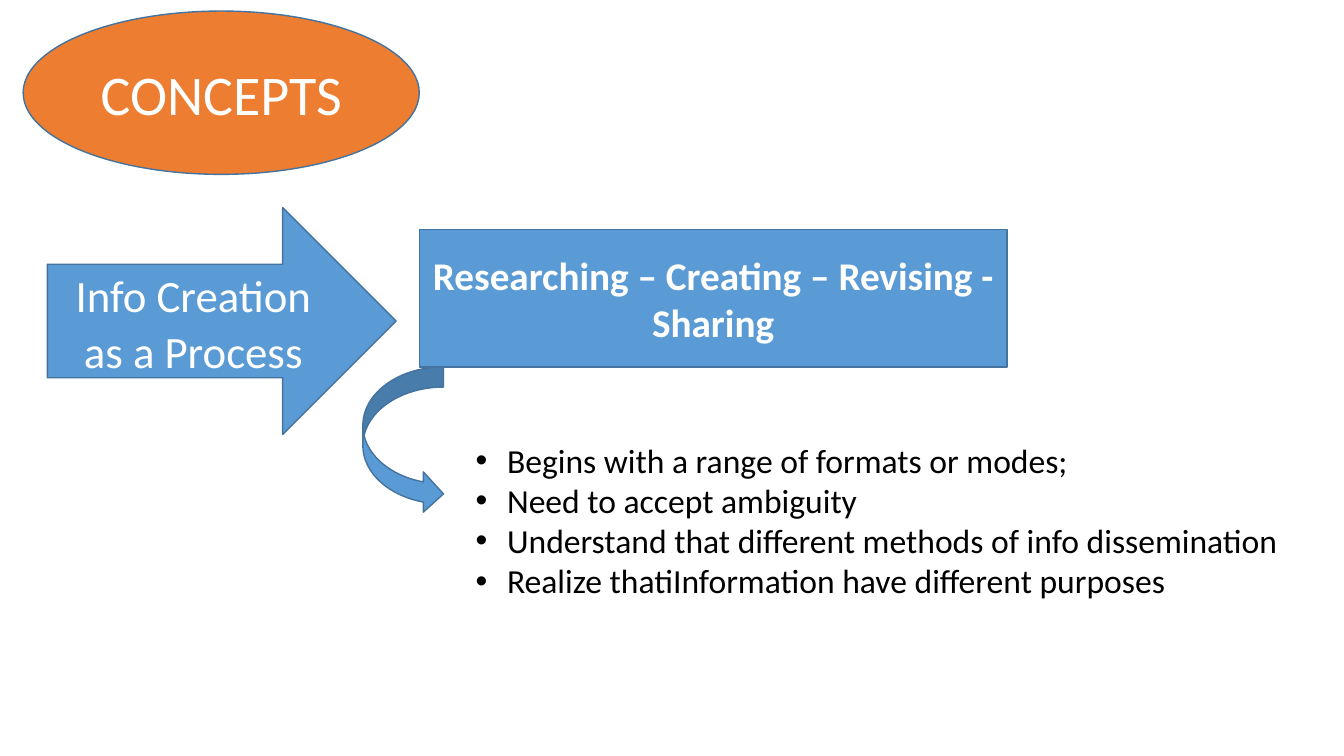
from dataclasses import dataclass

import pptx
import pptx.dml.color
import pptx.enum.shapes
import pptx.enum.text
import pptx.oxml
import pptx.oxml.ns
import pptx.util
from pptx.util import Pt

COLORS = {
    "blue": "5B9BD5",
    "orange": "ED7D31",
    "outline": "43739E",
    "white": "FFFFFF",
    "black": "000000",
}
FONT_NAME = "Calibri"
BULLET_INDENT = Pt(22.5)
SHAPES = pptx.enum.shapes.MSO_SHAPE


@dataclass(frozen=True)
class Box:
    left: float
    top: float
    width: float
    height: float

    def lengths(self) -> tuple[pptx.util.Length, ...]:
        return tuple(Pt(value) for value in (self.left, self.top, self.width, self.height))


@dataclass(frozen=True)
class Figure:
    kind: SHAPES
    box: Box
    fill: str = "blue"
    text: str = ""
    size: float = 28
    bold: bool = False
    line_spacing: float | None = None


FIGURES = [
    Figure(SHAPES.RIGHT_ARROW, Box(33.84, 148.32, 249.12, 162),
           text="Info Creation as a Process", size=32, line_spacing=40),
    Figure(SHAPES.OVAL, Box(16.56, 7.92, 282.96, 116.64), fill="orange",
           text="CONCEPTS", size=40),
    Figure(SHAPES.RECTANGLE, Box(299.52, 164.16, 419.76, 97.92),
           text="Researching – Creating – Revising - Sharing", bold=True),
    Figure(SHAPES.CURVED_RIGHT_ARROW, Box(259.2, 262.08, 57.6, 105.12)),
]
POINTS_BOX = Box(332.64, 310.32, 588.24, 123.84)
POINTS = [
    "Begins with a range of formats or modes;",
    "Need to accept ambiguity",
    "Understand that different methods of info dissemination",
    "Realize thatiInformation have different purposes",
]


def color(name: str) -> pptx.dml.color.RGBColor:
    return pptx.dml.color.RGBColor.from_string(COLORS[name])


def add_text(paragraph, text: str, size: float, color_name: str, bold: bool = False) -> None:
    run = paragraph.add_run()
    run.text = text
    formats = {"name": FONT_NAME, "size": Pt(size), "bold": bold}
    for attribute, value in formats.items():
        setattr(run.font, attribute, value)
    run.font.color.rgb = color(color_name)


def add_figure(slide, figure: Figure) -> None:
    shape = slide.shapes.add_shape(figure.kind, *figure.box.lengths())
    shape.shadow.inherit = False
    shape.fill.solid()
    shape.fill.fore_color.rgb = color(figure.fill)
    shape.line.color.rgb = color("outline")
    shape.line.width = Pt(1)
    if not figure.text:
        return
    frame_formats = {
        "word_wrap": True,
        "vertical_anchor": pptx.enum.text.MSO_ANCHOR.MIDDLE,
    }
    for attribute, value in frame_formats.items():
        setattr(shape.text_frame, attribute, value)
    paragraph = shape.text_frame.paragraphs[0]
    paragraph.alignment = pptx.enum.text.PP_ALIGN.CENTER
    if figure.line_spacing:
        paragraph.line_spacing = Pt(figure.line_spacing)
    add_text(paragraph, figure.text, figure.size, "white", figure.bold)


def add_bullet(paragraph) -> None:
    properties = paragraph._p.get_or_add_pPr()
    properties.set("marL", str(BULLET_INDENT))
    properties.set("indent", str(-BULLET_INDENT))
    namespace = pptx.oxml.ns.nsdecls("a")
    for markup in ('buFont {} typeface="Arial"', 'buChar {} char="•"'):
        properties.append(pptx.oxml.parse_xml(f"<a:{markup.format(namespace)}/>"))


def add_points(slide, box: Box, points: list[str]) -> None:
    frame = slide.shapes.add_textbox(*box.lengths()).text_frame
    frame.word_wrap = True
    frame.auto_size = pptx.enum.text.MSO_AUTO_SIZE.SHAPE_TO_FIT_TEXT
    for index, point in enumerate(points):
        paragraph = frame.add_paragraph() if index else frame.paragraphs[0]
        add_bullet(paragraph)
        add_text(paragraph, point, 24, "black")


def main() -> None:
    presentation = pptx.Presentation()
    presentation.slide_width = Pt(960)
    presentation.slide_height = Pt(540)
    slide = presentation.slides.add_slide(presentation.slide_layouts[6])
    for figure in FIGURES:
        add_figure(slide, figure)
    add_points(slide, POINTS_BOX, POINTS)
    presentation.save("out.pptx")


if __name__ == "__main__":
    main()
